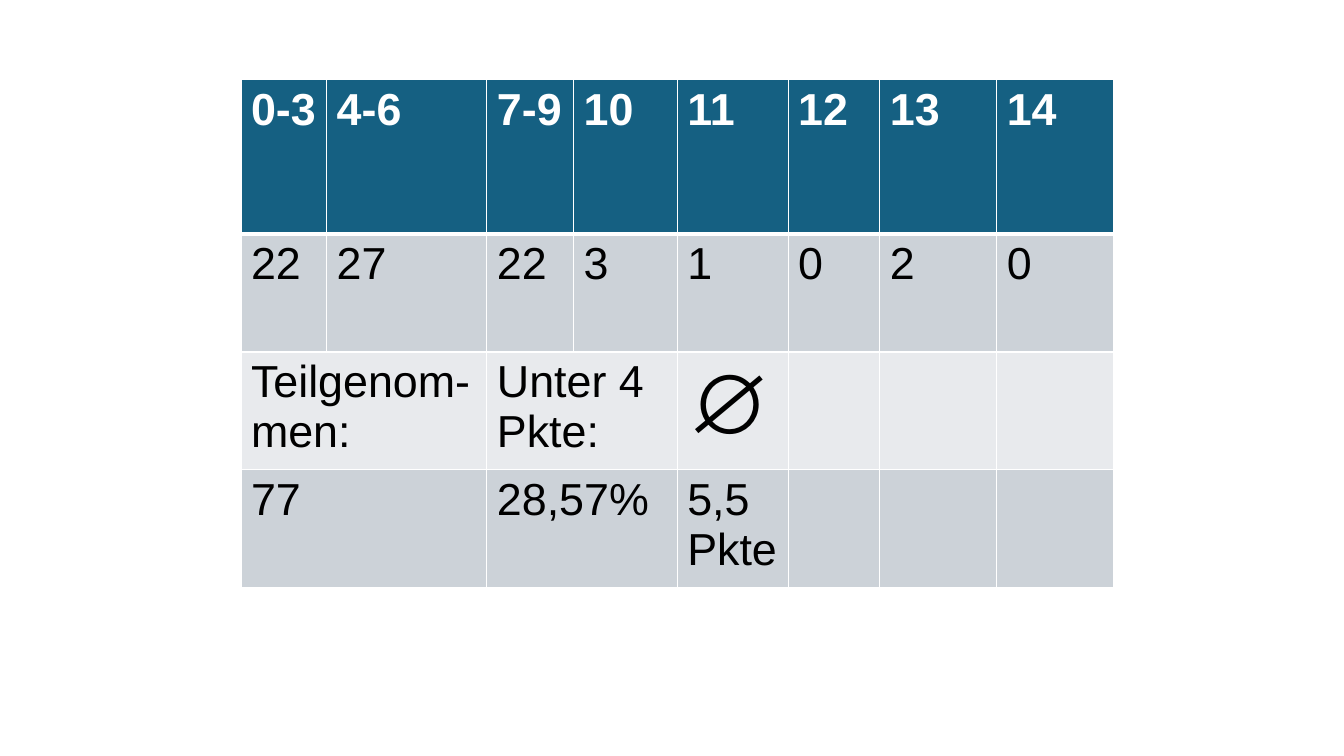
from lxml import etree
from pptx import Presentation
from pptx import util as u
from pptx.dml.color import RGBColor
from pptx.oxml import ns

COLORS = {
    "header": "156082",
    "dark_band": "CCD2D8",
    "light_band": "E8EAED",
    "white": "FFFFFF",
    "black": "000000",
}
BODY = {"name": "Arial", "size": u.Pt(32), "bold": False}
HEADER = {**BODY, "bold": True}
SYMBOL = {**BODY, "size": u.Pt(60), "bold": True}

COLUMN_WIDTHS = [61.2, 114.5, 61.9, 74.1, 79.2, 65.5, 83.5, 83.5]
ROW_HEIGHTS = [110.2, 84.2, 84.2, 84.2]
ROW_FILLS = ["header", "dark_band", "light_band", "dark_band"]
SCORES = [
    ["0-3", "4-6", "7-9", "10", "11", "12", "13", "14"],
    ["22", "27", "22", "3", "1", "0", "2", "0"],
    ["Teilgenom-men:", "", "Unter 4 Pkte:", "", "∅", "", "", ""],
    ["77", "", "28,57%", "", "5,5\vPkte", "", "", ""],
]
SUMMARY_ROWS = (2, 3)
MERGED_STARTS = (0, 2)


def rgb(name):
    return RGBColor.from_string(COLORS[name])


def set_borders(cell, widths):
    """Draw white cell borders; widths maps L, R, T, B to points."""
    properties = cell._tc.get_or_add_tcPr()
    for side, width in widths.items():
        line = etree.SubElement(properties, ns.qn(f"a:ln{side}"), w=str(u.Pt(width)))
        fill = etree.SubElement(line, ns.qn("a:solidFill"))
        etree.SubElement(fill, ns.qn("a:srgbClr"), val=COLORS["white"])


def write_text(cell, content, font_format, color):
    cell.text = content
    for run in cell.text_frame.paragraphs[0].runs:
        for attribute, value in font_format.items():
            setattr(run.font, attribute, value)
        run.font.color.rgb = rgb(color)


def add_score_table(slide, left, top, width, height):
    frame = slide.shapes.add_table(
        len(ROW_HEIGHTS), len(COLUMN_WIDTHS),
        u.Pt(left), u.Pt(top), u.Pt(width), u.Pt(height))
    table = frame.table
    for column, column_width in zip(table.columns, COLUMN_WIDTHS):
        column.width = u.Pt(column_width)
    for row, row_height in zip(table.rows, ROW_HEIGHTS):
        row.height = u.Pt(row_height)

    # Cell borders, fills and text
    for i, values in enumerate(SCORES):
        for j, value in enumerate(values):
            cell = table.cell(i, j)
            set_borders(cell, {"L": 1, "R": 1, "T": 3 if i == 1 else 1,
                               "B": 3 if i == 0 else 1})
            cell.fill.solid()
            cell.fill.fore_color.rgb = rgb(ROW_FILLS[i])
            font_format = HEADER if i == 0 else SYMBOL if value == "∅" else BODY
            if value:
                write_text(cell, value, font_format, "white" if i == 0 else "black")

    # Summary labels and values span two columns
    for i in SUMMARY_ROWS:
        for j in MERGED_STARTS:
            table.cell(i, j).merge(table.cell(i, j + 1))


def main():
    presentation = Presentation()
    presentation.slide_width, presentation.slide_height = u.Pt(960), u.Pt(540)
    slide = presentation.slides.add_slide(presentation.slide_layouts[6])
    add_score_table(slide, 172.1, 57, sum(COLUMN_WIDTHS), sum(ROW_HEIGHTS))
    presentation.save("out.pptx")


if __name__ == "__main__":
    main()
